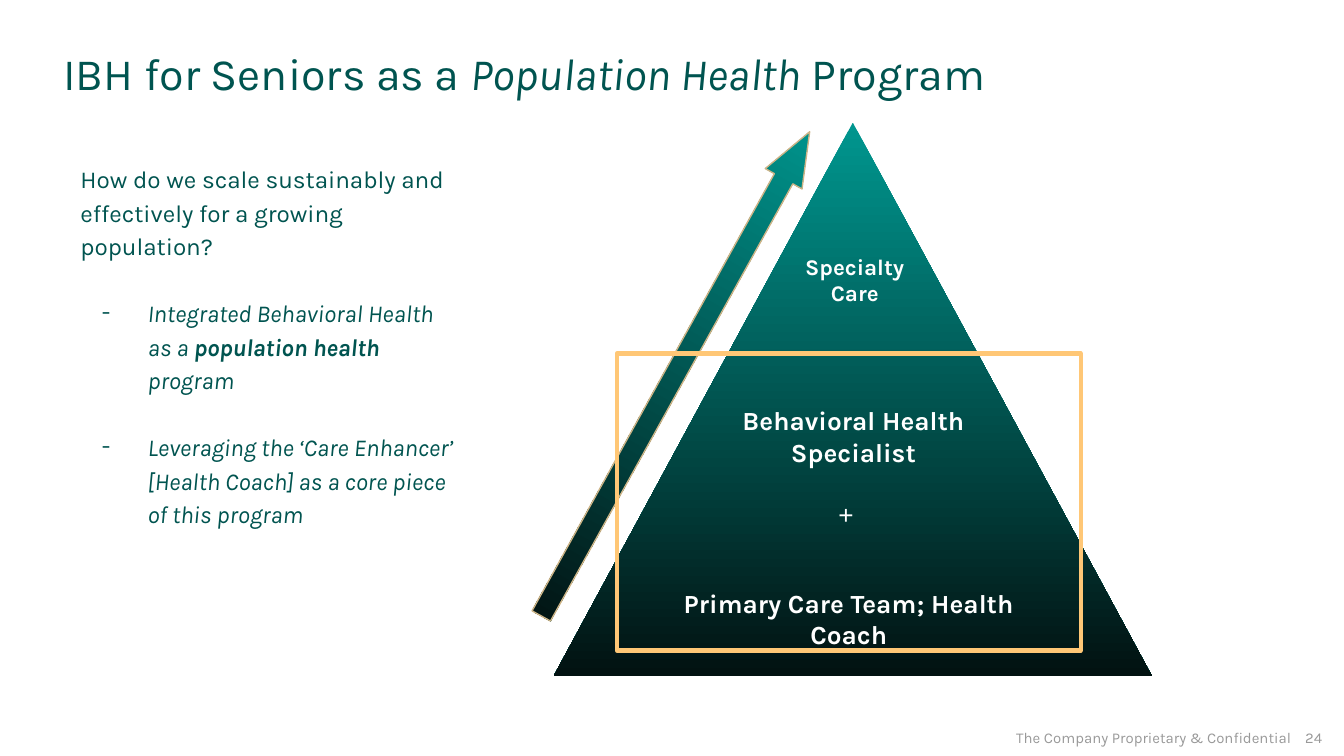
"""Build the population health pyramid slide."""
from dataclasses import dataclass

from lxml.etree import SubElement
from pptx import Presentation
from pptx.dml.color import RGBColor
from pptx.enum.shapes import MSO_SHAPE
from pptx.enum.text import MSO_ANCHOR, PP_ALIGN
from pptx.oxml.ns import qn
from pptx.util import Pt


@dataclass(frozen=True)
class Theme:
    font: str = "Karla"
    symbol_font: str = "Arial"
    green: str = "005450"
    teal: str = "00968F"
    dark: str = "021211"
    gold: str = "FFC776"
    tan: str = "CDB487"
    grey: str = "999999"
    white: str = "FFFFFF"
    title: float = 24
    label: float = 14
    body: float = 13
    small_label: float = 12
    footer: float = 8


class SlideBuilder:
    def __init__(self, slide, theme):
        self.s = slide
        self.theme = theme

    def text_frame(self, box, inset=7.2, anchor=MSO_ANCHOR.TOP):
        tf = self.s.shapes.add_textbox(*map(Pt, box)).text_frame
        tf.word_wrap = True
        tf.vertical_anchor = anchor
        tf.margin_left = tf.margin_right = Pt(inset)
        tf.margin_top = tf.margin_bottom = Pt(inset)
        return tf

    def run(self, p, text, size, color, bold=False, italic=False, font=None):
        r = p.add_run()
        r.text = text
        r.font.name = font or self.theme.font
        r.font.size = Pt(size)
        r.font.bold = bold
        r.font.italic = italic
        r.font.color.rgb = RGBColor.from_string(color)

    def title(self, box, runs):
        p = self.text_frame(box).paragraphs[0]
        for text, italic in runs:
            self.run(p, text, self.theme.title, self.theme.green, italic=italic)

    def body(self, box, question, points):
        t = self.theme
        tf = self.text_frame(box)
        p = tf.paragraphs[0]
        p.line_spacing = 1.15
        self.run(p, question, t.body, t.green)
        for runs in points:
            p = tf.add_paragraph()
            p.line_spacing = 1.15
            p.space_before = Pt(18)
            self.dash(p)
            for text, bold in runs:
                self.run(p, text, t.body, t.green, bold, italic=True)

    def dash(self, p):
        pPr = p._p.get_or_add_pPr()
        pPr.set("marL", str(Pt(36)))
        pPr.set("indent", str(Pt(-24.5)))
        color = SubElement(pPr, qn("a:buClr"))
        SubElement(color, qn("a:srgbClr"), val=self.theme.green)
        SubElement(pPr, qn("a:buFont"), typeface=self.theme.font)
        SubElement(pPr, qn("a:buChar"), char="-")

    def label(self, box, lines, size):
        tf = self.text_frame(box)
        for i, line in enumerate(lines):
            p = tf.add_paragraph() if i else tf.paragraphs[0]
            p.alignment = PP_ALIGN.CENTER
            self.run(p, line, size, self.theme.white, bold=True)

    def plus(self, box):
        t = self.theme
        p = self.text_frame(box).paragraphs[0]
        self.run(p, "+", t.label, t.white, font=t.symbol_font)

    def footer(self, box, text, align=PP_ALIGN.LEFT):
        p = self.text_frame(box, 9.4, MSO_ANCHOR.MIDDLE).paragraphs[0]
        p.alignment = align
        self.run(p, text, self.theme.footer, self.theme.grey)

    def shape(self, kind, box, line=None, width=0.75):
        sp = self.s.shapes.add_shape(kind, *map(Pt, box))
        sp.shadow.inherit = False
        if line:
            sp.line.color.rgb = RGBColor.from_string(line)
            sp.line.width = Pt(width)
        else:
            sp.line.fill.background()
        return sp

    def gradient_shape(self, kind, box, line=None):
        sp = self.shape(kind, box, line)
        sp.fill.gradient()
        sp.fill.gradient_angle = 270
        colors = (self.theme.teal, self.theme.dark)
        for stop, position, color in zip(sp.fill.gradient_stops, (0, 1), colors):
            stop.position = position
            stop.color.rgb = RGBColor.from_string(color)
        return sp

    def rising_arrow(self, box, rotation):
        sp = self.gradient_shape(MSO_SHAPE.UP_ARROW, box, self.theme.tan)
        sp.adjustments[0] = 0.5
        sp.adjustments[1] = 1.28
        sp.rotation = rotation

    def frame(self, box):
        sp = self.shape(MSO_SHAPE.FLOWCHART_PROCESS, box, self.theme.gold, 2.25)
        sp.fill.background()


def main():
    prs = Presentation()
    prs.slide_width, prs.slide_height = Pt(720), Pt(405)
    theme = Theme()
    b = SlideBuilder(prs.slides.add_slide(prs.slide_layouts[6]), theme)

    b.footer((687.6, 387.4, 32.4, 15.8), "24", PP_ALIGN.CENTER)
    b.footer((535, 387.4, 172.8, 15.8), "The Company Proprietary & Confidential")
    b.title((26.9, 17.3, 628, 41), [
        ("IBH for Seniors as a ", False),
        ("Population Health", True),
        (" Program", False),
    ])
    b.body(
        (36, 78.5, 215.3, 229.7),
        "How do we scale sustainably and effectively for a growing population?",
        [
            [("Integrated Behavioral Health as a ", False),
             ("population health", True),
             (" program", False)],
            [("Leveraging the ‘Care Enhancer’ [Health Coach] "
              "as a core piece of this program", False)],
        ],
    )
    b.gradient_shape(MSO_SHAPE.ISOSCELES_TRIANGLE, (296.6, 65.7, 320.6, 296.6))
    b.rising_arrow((350.6, 52, 22.5, 296.6), 29)
    b.label((413.3, 128.2, 89.3, 53.3), ["Specialty Care"], theme.small_label)
    b.label((387.4, 209.5, 139.7, 37.4), ["Behavioral Health", "Specialist"], theme.label)
    b.label((337, 307.4, 235.4, 31.7), ["Primary Care Team; Health Coach"], theme.label)
    b.frame((330.5, 189.4, 248.4, 159.1))
    b.plus((442.1, 259.9, 15.1, 31.7))
    prs.save("out.pptx")


if __name__ == "__main__":
    main()
